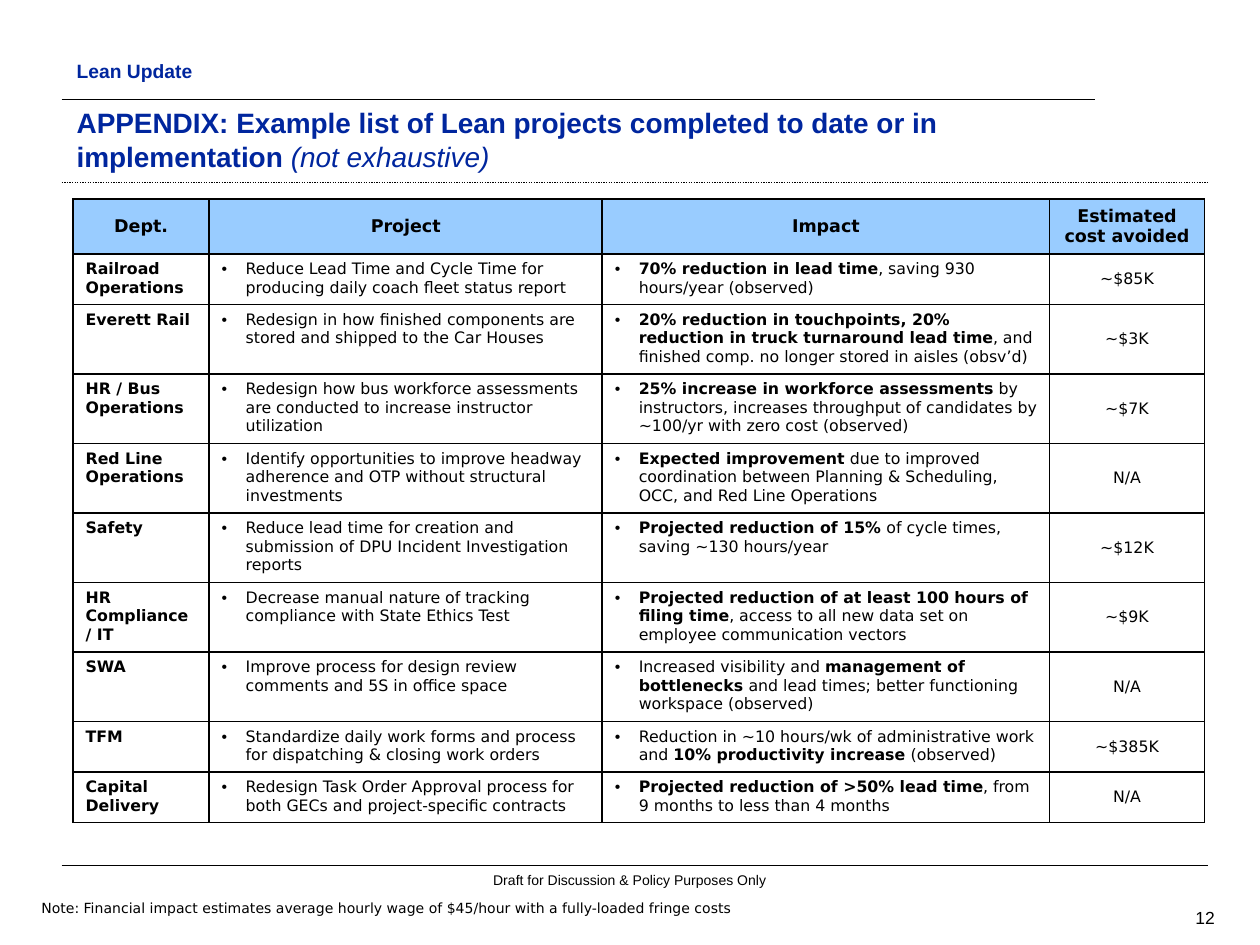
from dataclasses import dataclass

import lxml.etree
import pptx
import pptx.dml.color
import pptx.enum.dml
import pptx.enum.shapes
import pptx.enum.text
import pptx.oxml.ns
import pptx.util

Inches = pptx.util.Inches
Pt = pptx.util.Pt
qn = pptx.oxml.ns.qn
ALIGN = pptx.enum.text.PP_ALIGN
ANCHOR = pptx.enum.text.MSO_ANCHOR
DASH = pptx.enum.dml.MSO_LINE


@dataclass(frozen=True)
class Theme:
    ink: str = "000000"
    heading: str = "00269E"
    header_fill: str = "99CCFF"
    heading_font: str = "Arial"
    table_font: str = "DejaVu Sans"
    title_size: float = 16
    section_size: float = 11
    header_size: float = 10
    cell_size: float = 9
    page_size: float = 10
    small_size: float = 8
    border: float = 1


THEME = Theme()

HEADERS = ["Dept.", "Project", "Impact", "Estimated cost avoided"]
COLUMN_WIDTHS = [1.08, 3.12, 3.55, 1.23]
HEADER_HEIGHT, TWO_LINES, THREE_LINES = 0.43, 0.39, 0.54

PROJECTS = [
    (TWO_LINES, "Railroad Operations",
     "Reduce Lead Time and Cycle Time for producing daily coach fleet status report",
     "**70% reduction in lead time**, saving 930 hours/year (observed)", "~$85K"),
    (THREE_LINES, "Everett Rail",
     "Redesign in how finished components are stored and shipped to the Car Houses",
     "**20% reduction in touchpoints, 20% reduction in truck turnaround lead time**, "
     "and finished comp. no longer stored in aisles (obsv’d)", "~$3K"),
    (THREE_LINES, "HR / Bus Operations",
     "Redesign how bus workforce assessments are conducted to increase instructor utilization",
     "**25% increase in workforce assessments **by instructors, increases throughput "
     "of candidates by ~100/yr with zero cost (observed)", "~$7K"),
    (THREE_LINES, "Red Line Operations",
     "Identify opportunities to improve headway adherence and OTP without structural investments",
     "**Expected improvement **due to improved coordination between Planning & Scheduling, "
     "OCC, and Red Line Operations", "N/A"),
    (THREE_LINES, "Safety",
     "Reduce lead time for creation and submission of DPU Incident Investigation reports",
     "**Projected reduction of 15% **of cycle times, saving ~130 hours/year", "~$12K"),
    (THREE_LINES, "HR Compliance / IT",
     "Decrease manual nature of tracking compliance with State Ethics Test",
     "**Projected reduction of at least 100 hours of filing time**, access to all new "
     "data set on employee communication vectors", "~$9K"),
    (THREE_LINES, "SWA",
     "Improve process for design review comments and 5S in office space",
     "Increased visibility and **management of bottlenecks **and lead times; "
     "better functioning workspace (observed)", "N/A"),
    (TWO_LINES, "TFM",
     "Standardize daily work forms and process for dispatching & closing work orders",
     "Reduction in ~10 hours/wk of administrative work and "
     "**10% productivity increase **(observed)", "~$385K"),
    (TWO_LINES, "Capital Delivery",
     "Redesign Task Order Approval process for both GECs and project-specific contracts",
     "**Projected reduction of >50% lead time**, from 9 months to less than 4 months", "N/A"),
]


def rgb(value):
    return pptx.dml.color.RGBColor.from_string(value)


def add_run(paragraph, text, font, size, color, bold=False, italic=False):
    run = paragraph.add_run()
    run.text = text
    run.font.name = font
    run.font.size = Pt(size)
    run.font.color.rgb = rgb(color)
    run.font.bold = bold
    run.font.italic = italic


def hang(paragraph, indent):
    properties = paragraph._p.get_or_add_pPr()
    properties.set("marL", str(Inches(indent)))
    properties.set("indent", str(-Inches(indent)))
    return properties


def add_rule(slide, y, right, width, dash=None):
    rule = slide.shapes.add_connector(
        pptx.enum.shapes.MSO_CONNECTOR.STRAIGHT,
        Inches(0.49), Inches(y), Inches(right), Inches(y))
    rule.line.color.rgb = rgb(THEME.ink)
    rule.line.width = Pt(width)
    if dash is not None:
        rule.line.dash_style = dash
    lxml.etree.SubElement(rule._element.spPr, qn("a:effectLst"))


def add_text(slide, left, top, width, height, align=ALIGN.LEFT, anchor=ANCHOR.TOP):
    box = slide.shapes.add_textbox(Inches(left), Inches(top), Inches(width), Inches(height))
    box.text_frame.word_wrap = True
    box.text_frame.vertical_anchor = anchor
    paragraph = box.text_frame.paragraphs[0]
    paragraph.alignment = align
    return paragraph


def add_borders(cell):
    properties = cell._tc.get_or_add_tcPr()
    for position, side in enumerate(("a:lnL", "a:lnR", "a:lnT", "a:lnB")):
        edge = lxml.etree.Element(qn(side), w=str(Pt(THEME.border)))
        fill = lxml.etree.SubElement(edge, qn("a:solidFill"))
        lxml.etree.SubElement(fill, qn("a:srgbClr"), val=THEME.ink)
        properties.insert(position, edge)


def fill_cell(cell, text, size=THEME.cell_size, bold=False, centred=False,
              bulleted=False, fill=None):
    if fill:
        cell.fill.solid()
        cell.fill.fore_color.rgb = rgb(fill)
    else:
        cell.fill.background()
    add_borders(cell)
    cell.vertical_anchor = ANCHOR.MIDDLE if centred else ANCHOR.TOP
    paragraph = cell.text_frame.paragraphs[0]
    paragraph.alignment = ALIGN.CENTER if centred else ALIGN.LEFT
    if bulleted:
        properties = hang(paragraph, 0.19)
        lxml.etree.SubElement(properties, qn("a:buFont"), typeface=THEME.heading_font)
        lxml.etree.SubElement(properties, qn("a:buChar"), char="•")
    for index, part in enumerate(text.split("**")):
        if part:
            add_run(paragraph, part, THEME.table_font, size, THEME.ink, bold or index % 2 == 1)


def add_project_table(slide):
    heights = [HEADER_HEIGHT] + [project[0] for project in PROJECTS]
    table = slide.shapes.add_table(
        len(heights), len(HEADERS), Inches(0.58), Inches(1.58),
        Inches(sum(COLUMN_WIDTHS)), Inches(sum(heights))).table
    table.first_row = True
    table.horz_banding = False
    for column, width in zip(table.columns, COLUMN_WIDTHS):
        column.width = Inches(width)
    for row, height in zip(table.rows, heights):
        row.height = Inches(height)
    for column, header in enumerate(HEADERS):
        fill_cell(table.cell(0, column), header, THEME.header_size,
                  bold=True, centred=True, fill=THEME.header_fill)
    for row, (_, department, project, impact, saving) in enumerate(PROJECTS, 1):
        fill_cell(table.cell(row, 0), department, bold=True)
        fill_cell(table.cell(row, 1), project, bulleted=True)
        fill_cell(table.cell(row, 2), impact, bulleted=True)
        fill_cell(table.cell(row, 3), saving, centred=True)


def main():
    deck = pptx.Presentation()
    deck.slide_width, deck.slide_height = Inches(10), Inches(7.5)
    slide = deck.slides.add_slide(deck.slide_layouts[6])

    add_rule(slide, 0.79, 8.69, 1)
    add_rule(slide, 1.45, 9.59, 0.75, DASH.ROUND_DOT)
    add_rule(slide, 6.87, 9.59, 0.75)

    page = add_text(slide, 8.91, 7.16, 0.83, 0.25, ALIGN.RIGHT, ANCHOR.MIDDLE)
    add_run(page, "12", THEME.heading_font, THEME.page_size, THEME.ink)
    footer = add_text(slide, 3.57, 6.87, 2.86, 0.24, ALIGN.CENTER)
    add_run(footer, "Draft for Discussion & Policy Purposes Only",
            THEME.heading_font, THEME.small_size, THEME.ink)

    title = add_text(slide, 0.51, 0.91, 8.48, 0.51, anchor=ANCHOR.BOTTOM)
    add_run(title, "APPENDIX: Example list of Lean projects completed to date or in implementation ",
            THEME.heading_font, THEME.title_size, THEME.heading, bold=True)
    add_run(title, "(not exhaustive)",
            THEME.heading_font, THEME.title_size, THEME.heading, italic=True)
    section = add_text(slide, 0.51, 0.42, 7.99, 0.25)
    hang(section, 0.25)
    add_run(section, "Lean Update", THEME.heading_font, THEME.section_size,
            THEME.heading, bold=True)

    add_project_table(slide)

    note = add_text(slide, 0.23, 7.09, 9.33, 0.24)
    hang(note, 0.38)
    add_run(note, "Note: Financial impact estimates average hourly wage of $45/hour "
            "with a fully-loaded fringe costs", THEME.table_font, THEME.small_size, THEME.ink)

    deck.save("out.pptx")


if __name__ == "__main__":
    main()
